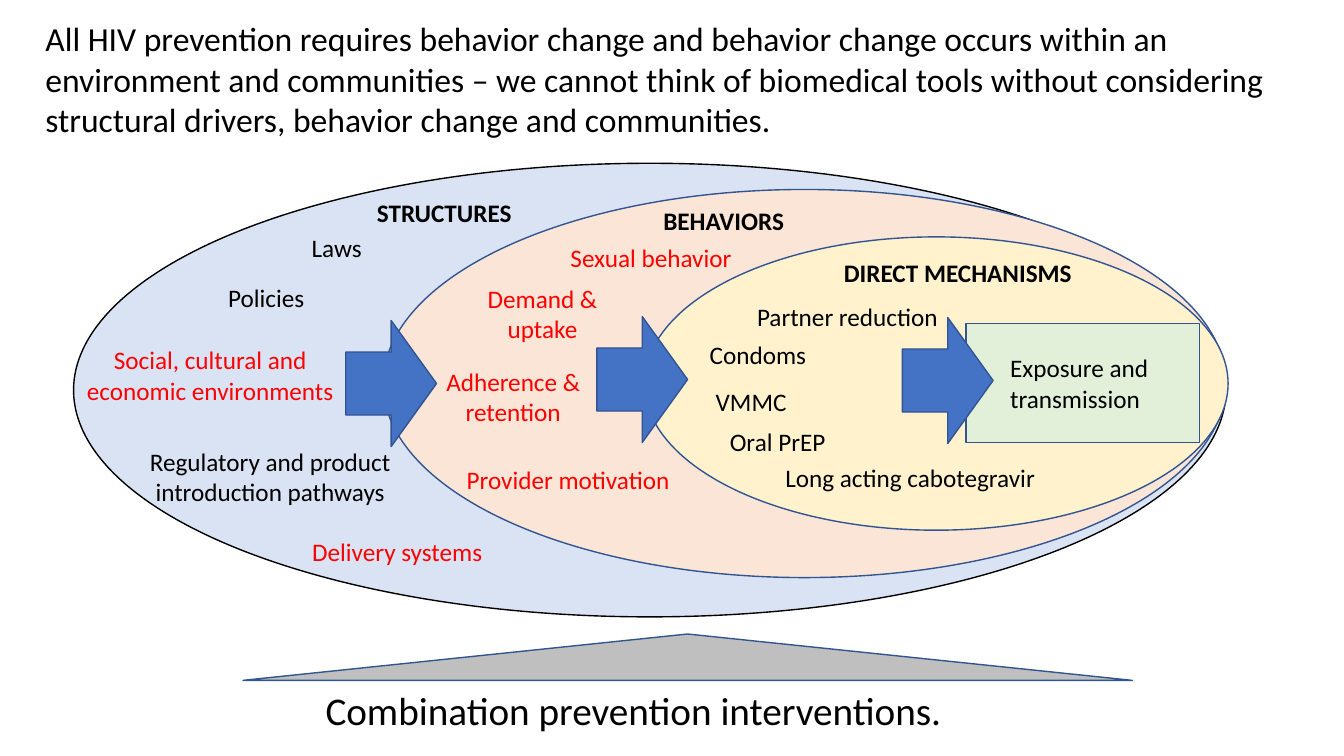
"""Builds the slide on structures, behaviors and direct mechanisms of HIV prevention."""
from pptx import Presentation
from pptx.dml.color import RGBColor
from pptx.enum.shapes import MSO_SHAPE as Kind
from pptx.enum.text import MSO_ANCHOR, MSO_AUTO_SIZE, PP_ALIGN
from pptx.util import Inches, Pt

BLACK, RED, NAVY = "000000", "FF0000", "325491"
LEFT, MID = PP_ALIGN.LEFT, PP_ALIGN.CENTER


def paint(color, hue):
    color.rgb = RGBColor.from_string(hue)


def write(box, lines, size, hue, align, bold=False):
    frame = box.text_frame
    frame.word_wrap = True
    frame.auto_size = MSO_AUTO_SIZE.NONE
    frame.vertical_anchor = MSO_ANCHOR.TOP
    for i, line in enumerate(lines):
        para = frame.add_paragraph() if i else frame.paragraphs[0]
        para.alignment = align
        run = para.add_run()
        run.text = line
        run.font.name = "Calibri"
        run.font.size = Pt(size)
        run.font.bold = bold
        paint(run.font.color, hue)


deck = Presentation()
deck.slide_width, deck.slide_height = Inches(13.33), Inches(7.5)
slide = deck.slides.add_slide(deck.slide_layouts[5])

title = slide.shapes.title
title.left, title.top = Inches(0.35), Inches(0.13)
title.width, title.height = Inches(12.64), Inches(1.31)
write(title, [
    "All HIV prevention requires behavior change and behavior change occurs "
    "within an environment and communities – we cannot think of biomedical "
    "tools without considering structural drivers, behavior change and "
    "communities."], 24, BLACK, LEFT)

forms = [
    (Kind.OVAL, 0.73, 1.62, 11.43, 4.5, "DAE3F3", BLACK),
    (Kind.OVAL, 3.8, 1.88, 8.36, 3.85, "FBE5D6", NAVY),
    (Kind.OVAL, 6.39, 2.35, 5.79, 2.91, "FFF2CC", NAVY),
    (Kind.RECTANGLE, 9.58, 3.21, 2.32, 1.18, "E2F0D9", NAVY),
    (Kind.ISOSCELES_TRIANGLE, 2.41, 6.29, 8.82, 0.46, "BFBFBF", NAVY),
]
for x, y in [(3.43, 3.18), (5.92, 3.14), (8.95, 3.15)]:
    forms.append((Kind.RIGHT_ARROW, x, y, 0.9, 1.25, "4472C4", NAVY))
for kind, x, y, w, h, fill, edge in forms:
    form = slide.shapes.add_shape(kind, Inches(x), Inches(y), Inches(w), Inches(h))
    form.shadow.inherit = False
    form.fill.solid()
    paint(form.fill.fore_color, fill)
    paint(form.line.color, edge)
    form.line.width = Pt(1)

heads = [
    ("STRUCTURES", 3.64, 1.91, 1.56, 0.4, 18, True),
    ("BEHAVIORS", 6.48, 1.99, 1.41, 0.4, 18, True),
    ("DIRECT MECHANISMS", 8.27, 2.5, 2.48, 0.4, 18, True),
    ("Combination prevention interventions.", 3.13, 6.76, 6.38, 0.57, 28, False),
]
for text, x, y, w, h, size, bold in heads:
    box = slide.shapes.add_textbox(Inches(x), Inches(y), Inches(w), Inches(h))
    write(box, [text], size, BLACK, LEFT, bold)
    box.text_frame.word_wrap = False

notes = [
    (["Laws"], 2.08, 2.26, 2.52, 0.4, BLACK, MID),
    (["Policies"], 1.38, 2.75, 2.52, 0.4, BLACK, MID),
    (["Social, cultural and economic environments"], 0.56, 3.37, 3.05, 0.71, RED, MID),
    (["Regulatory and product introduction pathways"], 1.15, 4.38, 3.06, 0.71, BLACK, MID),
    (["Delivery systems"], 2.68, 5.27, 2.52, 0.4, RED, MID),
    (["Sexual behavior"], 5.56, 2.35, 2.52, 0.4, RED, LEFT),
    (["Demand & uptake"], 4.67, 2.76, 1.42, 0.71, RED, MID),
    (["Adherence &", "retention"], 3.83, 3.58, 2.52, 0.71, RED, MID),
    (["Provider motivation"], 4.53, 4.56, 2.52, 0.4, RED, LEFT),
    (["Partner reduction"], 7.41, 2.94, 2.52, 0.4, BLACK, LEFT),
    (["Condoms"], 6.94, 3.32, 2.52, 0.4, BLACK, LEFT),
    (["VMMC"], 7, 3.78, 2.52, 0.4, BLACK, LEFT),
    (["Oral PrEP"], 7.14, 4.18, 2.52, 0.4, BLACK, LEFT),
    (["Long acting cabotegravir"], 7.69, 4.54, 2.95, 0.4, BLACK, LEFT),
    (["Exposure and transmission"], 9.92, 3.45, 2.52, 0.71, BLACK, LEFT),
]
for lines, x, y, w, h, hue, align in notes:
    box = slide.shapes.add_textbox(Inches(x), Inches(y), Inches(w), Inches(h))
    write(box, lines, 18, hue, align)

deck.save("out.pptx")
